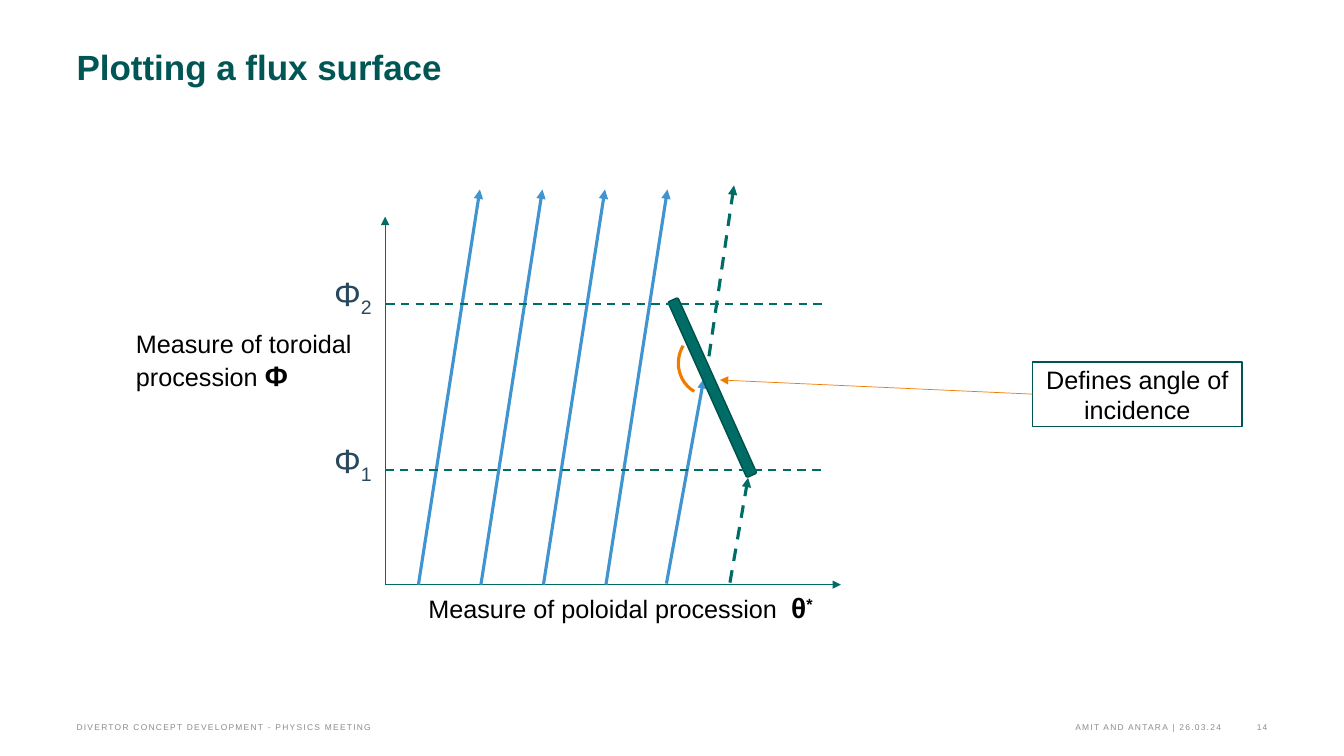
import pptx
import pptx.util
import pptx.dml.color
import pptx.enum.dml
import pptx.enum.shapes
import pptx.enum.text
import pptx.oxml
import pptx.oxml.ns

Inches, Pt = pptx.util.Inches, pptx.util.Pt
rgb = pptx.dml.color.RGBColor.from_string
SHAPE = pptx.enum.shapes.MSO_SHAPE
ALIGN = pptx.enum.text.PP_ALIGN
ANCHOR = pptx.enum.text.MSO_ANCHOR
GROW = pptx.enum.text.MSO_AUTO_SIZE.SHAPE_TO_FIT_TEXT
NO_INSETS = dict.fromkeys(("margin_left", "margin_top", "margin_right", "margin_bottom"), 0)
GREEN, DARK_GREEN, BLUE, ORANGE = "006C66", "005555", "4094D0", "EF7C00"
BLACK, SLATE, GREY = "000000", "29485D", "8C8C8C"

presentation = pptx.Presentation()
presentation.slide_width, presentation.slide_height = Inches(13.33), Inches(7.5)
slide = presentation.slides.add_slide(presentation.slide_layouts[6])
shapes = slide.shapes


def add_line(start, end, color, width, dashed=False, arrow=True):
    line = shapes.add_connector(pptx.enum.shapes.MSO_CONNECTOR.STRAIGHT,
                                *(Inches(v) for v in start + end))
    line.line.color.rgb = rgb(color)
    line.line.width = Pt(width)
    if dashed:
        line.line.dash_style = pptx.enum.dml.MSO_LINE.DASH
    if arrow:
        head = pptx.oxml.parse_xml(f'<a:tailEnd {pptx.oxml.ns.nsdecls("a")} type="triangle"/>')
        line.line._get_or_add_ln().append(head)
    line._element.spPr.append(
        pptx.oxml.parse_xml(f'<a:effectLst {pptx.oxml.ns.nsdecls("a")}/>'))
    return line


def write_text(shape, runs, color, frame_format=None, paragraph_format=None):
    """Fill the shape with one paragraph; a run is text, size, bold and extra run attributes."""
    frame = shape.text_frame
    frame.word_wrap = True
    paragraph = frame.paragraphs[0]
    for target, values in ((frame, frame_format), (paragraph, paragraph_format)):
        for name, value in (values or {}).items():
            setattr(target, name, value)
    for text, size, bold, extras in runs:
        run = paragraph.add_run()
        run.text = text
        font_format = {"name": "Arial", "size": Pt(size), "bold": bold}
        for name, value in font_format.items():
            setattr(run.font, name, value)
        run.font.color.rgb = rgb(color)
        for name, value in extras.items():
            run.font._element.set(name, str(value))


# Title
title = shapes.add_textbox(Inches(0.76), Inches(0.48), Inches(10.47), Inches(0.86))
write_text(title, [("Plotting a flux surface", 25, True, {})], DARK_GREEN, NO_INSETS,
           {"line_spacing": Pt(28), "space_after": Pt(18)})

# Axes
origin = (3.82, 5.8)
for axis_end in ((3.82, 2.15), (8.34, 5.8)):
    add_line(origin, axis_end, GREEN, 0.5)

# Field lines: four complete ones, one stopped by the target, then its shadowed part
for index in range(4):
    foot = 4.15 + 0.62 * index
    add_line((foot, 5.8), (foot + 0.61, 1.88), BLUE, 2.25)
add_line((6.61, 5.79), (6.98, 3.76), BLUE, 2.25)
for start, end in (((7.24, 5.78), (7.42, 4.74)), ((7, 3.75), (7.28, 1.84))):
    add_line(start, end, GREEN, 2.25, dashed=True)

# Angle of incidence and its label
angle_arc = shapes.add_shape(SHAPE.ARC, Inches(6.72), Inches(3.27), Inches(0.67), Inches(0.65))
angle_arc._element.spPr.xfrm.set("flipH", "1")
angle_arc.rotation = 300.4
angle_label = shapes.add_shape(SHAPE.RECTANGLE, Inches(10.24), Inches(3.59),
                               Inches(2.08), Inches(0.64))
write_text(angle_label, [("Defines angle of incidence", 18, False, {})], BLACK,
           {"vertical_anchor": ANCHOR.MIDDLE}, {"alignment": ALIGN.CENTER})
pointer = add_line((10.24, 3.91), (7.14, 3.77), ORANGE, 0.5)
pointer.begin_connect(angle_label, 1)

# Tilted target
target = shapes.add_shape(SHAPE.ROUNDED_RECTANGLE, Inches(7.01), Inches(2.89),
                          Inches(0.11), Inches(1.91))
target.rotation = 335.8
target.fill.solid()
target.fill.fore_color.rgb = rgb(GREEN)
for outlined, color, width in ((angle_arc, ORANGE, 2.25), (angle_label, DARK_GREEN, 1),
                               (target, "00504B", 1)):
    outlined.shadow.inherit = False
    outlined.line.color.rgb = rgb(color)
    outlined.line.width = Pt(width)
    if outlined is not target:
        outlined.fill.background()

# Toroidal levels
for subscript, left, level, label_top in (("1", 3.82, 4.66, 4.5), ("2", 3.83, 3.02, 2.84)):
    add_line((left, level), (left + 4.33, level), GREEN, 1.5, dashed=True, arrow=False)
    level_label = shapes.add_textbox(Inches(3.28), Inches(label_top), Inches(0.44), Inches(0.32))
    write_text(level_label,
               [("Φ", 24, False, {}), (subscript, 24, False, {"baseline": -25000})], SLATE,
               {**NO_INSETS, "auto_size": GROW},
               {"alignment": ALIGN.CENTER, "line_spacing": Pt(23)})

# Axis labels
axis_labels = (
    (1.25, 3.21, 2.34, [("Measure of toroidal procession ", 18, False, {}),
                        ("Φ", 20, True, {})]),
    (4.15, 5.81, 4.19, [("Measure of poloidal procession", 18, False, {}),
                        (" ", 18, False, {"spc": 500}),
                        ("θ", 20, True, {}),
                        ("*", 20, True, {"baseline": 30000})]),
)
for left, top, width, runs in axis_labels:
    axis_label = shapes.add_textbox(Inches(left), Inches(top), Inches(width), Inches(0.74))
    write_text(axis_label, runs, BLACK, {"auto_size": GROW})

# Footer
footer_parts = (
    (4.51, 7.6, ALIGN.RIGHT, "AMIT AND ANTARA | 26.03.24"),
    (0.76, 6.66, ALIGN.LEFT, "DIVERTOR CONCEPT DEVELOPMENT - PHYSICS MEETING"),
    (12.21, 0.36, ALIGN.RIGHT, "14"),
)
for left, width, alignment, text in footer_parts:
    footer = shapes.add_textbox(Inches(left), Inches(7.1), Inches(width), Inches(0.16))
    write_text(footer, [(text, 6, False, {"spc": 90})], GREY,
               {**NO_INSETS, "vertical_anchor": ANCHOR.BOTTOM}, {"alignment": alignment})

presentation.save("out.pptx")
